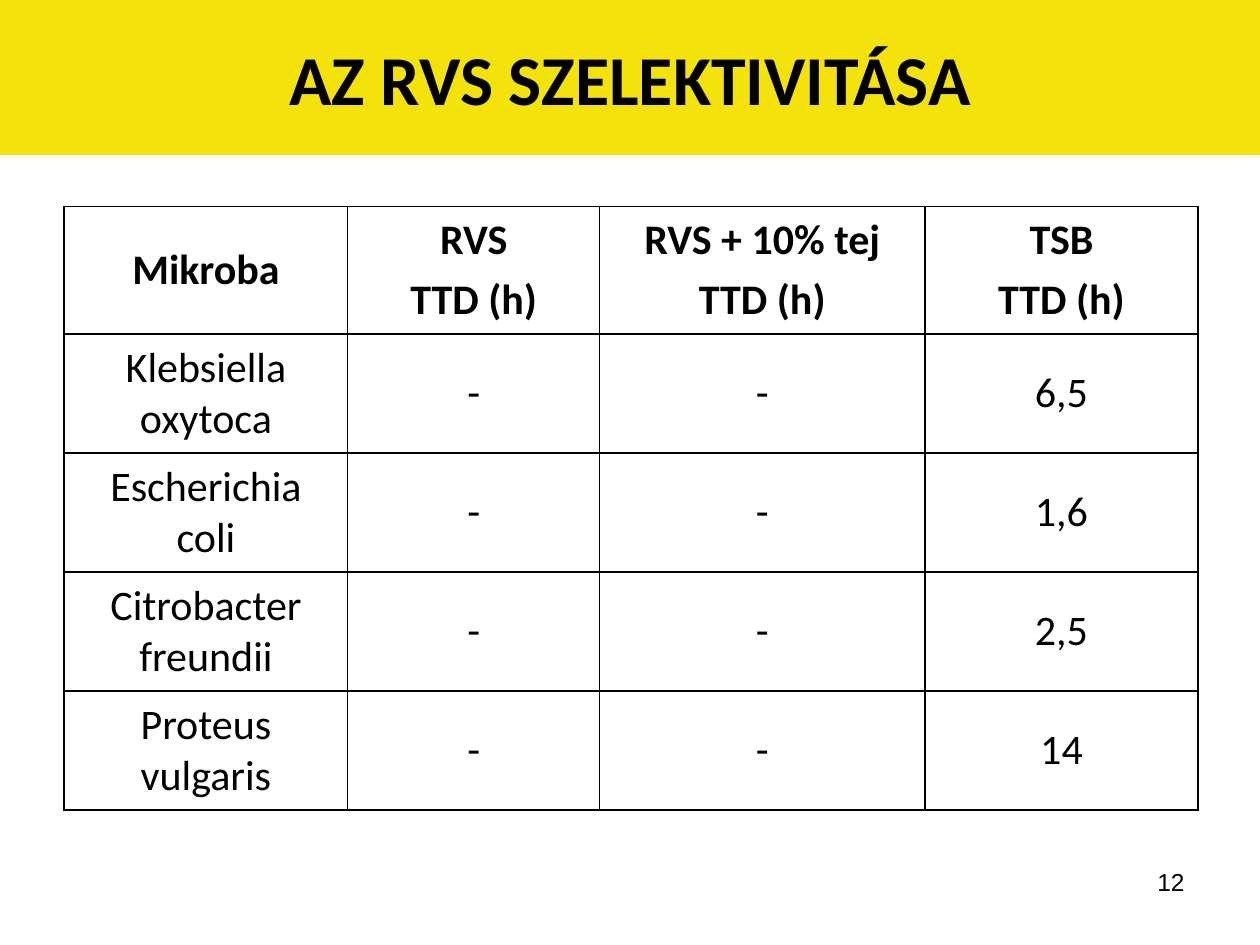
from lxml import etree
from pptx import Presentation
from pptx.dml.color import RGBColor
from pptx.enum.shapes import MSO_SHAPE
from pptx.enum.text import MSO_ANCHOR, PP_ALIGN
from pptx.oxml.ns import qn
from pptx.util import Inches, Pt

RECTANGLE = MSO_SHAPE.RECTANGLE
MIDDLE = MSO_ANCHOR.MIDDLE
CENTER, RIGHT = PP_ALIGN.CENTER, PP_ALIGN.RIGHT
BLACK = RGBColor(0x00, 0x00, 0x00)
YELLOW = RGBColor(0xF4, 0xE3, 0x0A)

COLUMNS = [2.25, 2, 2.58, 2.17]
HEADER_HEIGHT, ROW_HEIGHT = 1.01, 0.945
LINE_GAP = 0.2  # share of the text size
ROWS = [
    ["Mikroba", "RVS\nTTD (h)", "RVS + 10% tej\nTTD (h)", "TSB\nTTD (h)"],
    ["Klebsiella oxytoca", "-", "-", "6,5"],
    ["Escherichia coli", "-", "-", "1,6"],
    ["Citrobacter freundii", "-", "-", "2,5"],
    ["Proteus vulgaris", "-", "-", "14"],
]


def write(frame, text, size, font="Calibri", bold=False, align=CENTER):
    for index, line in enumerate(text.split("\n")):
        para = frame.add_paragraph() if index else frame.paragraphs[0]
        para.alignment = align
        if index:
            para.space_before = Pt(size * LINE_GAP)
        span = para.add_run()
        span.text = line
        span.font.name = font
        span.font.size = Pt(size)
        span.font.bold = bold
        span.font.color.rgb = BLACK


def add_borders(cell):
    properties = cell._tc.get_or_add_tcPr()
    for side in ("a:lnL", "a:lnR", "a:lnT", "a:lnB"):
        line = etree.SubElement(properties, qn(side), w=str(Pt(1)))
        fill = etree.SubElement(line, qn("a:solidFill"))
        etree.SubElement(fill, qn("a:srgbClr"), val=str(BLACK))


deck = Presentation()
deck.slide_width, deck.slide_height = Inches(10), Inches(7.5)
page = deck.slides.add_slide(deck.slide_layouts[6])

# Slide number
number_box = page.shapes.add_textbox(Inches(7.17), Inches(6.83), Inches(2.33), Inches(0.52))
number_box.text_frame.word_wrap = True
write(number_box.text_frame, "12", 14, font="Arial", align=RIGHT)

# Title band
band = page.shapes.add_shape(RECTANGLE, 0, 0, deck.slide_width, Inches(1.23))
band.shadow.inherit = False
band.fill.solid()
band.fill.fore_color.rgb = YELLOW
band.line.fill.background()
band.text_frame.word_wrap = True
band.text_frame.vertical_anchor = MIDDLE
write(band.text_frame, "AZ RVS SZELEKTIVITÁSA", 40, bold=True)

# Detection time table
table_height = HEADER_HEIGHT + ROW_HEIGHT * (len(ROWS) - 1)
table = page.shapes.add_table(
    len(ROWS), len(COLUMNS), Inches(0.51), Inches(1.64),
    Inches(sum(COLUMNS)), Inches(table_height),
).table
table.horz_banding = False
for column, width in zip(table.columns, COLUMNS):
    column.width = Inches(width)
for row_index, texts in enumerate(ROWS):
    is_header = row_index == 0
    table.rows[row_index].height = Inches(HEADER_HEIGHT if is_header else ROW_HEIGHT)
    for column_index, text in enumerate(texts):
        cell = table.cell(row_index, column_index)
        cell.vertical_anchor = MIDDLE
        add_borders(cell)
        cell.fill.background()
        write(cell.text_frame, text, 24, bold=is_header)

deck.save("out.pptx")
